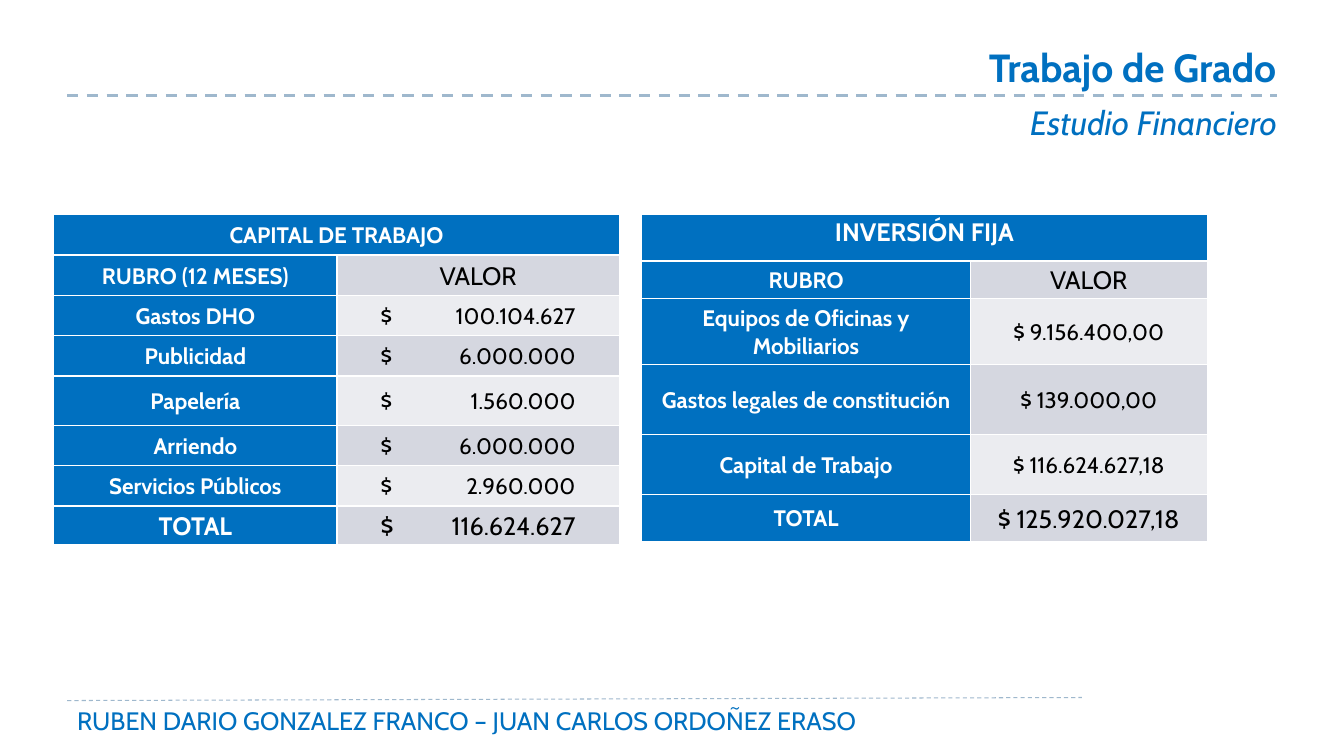
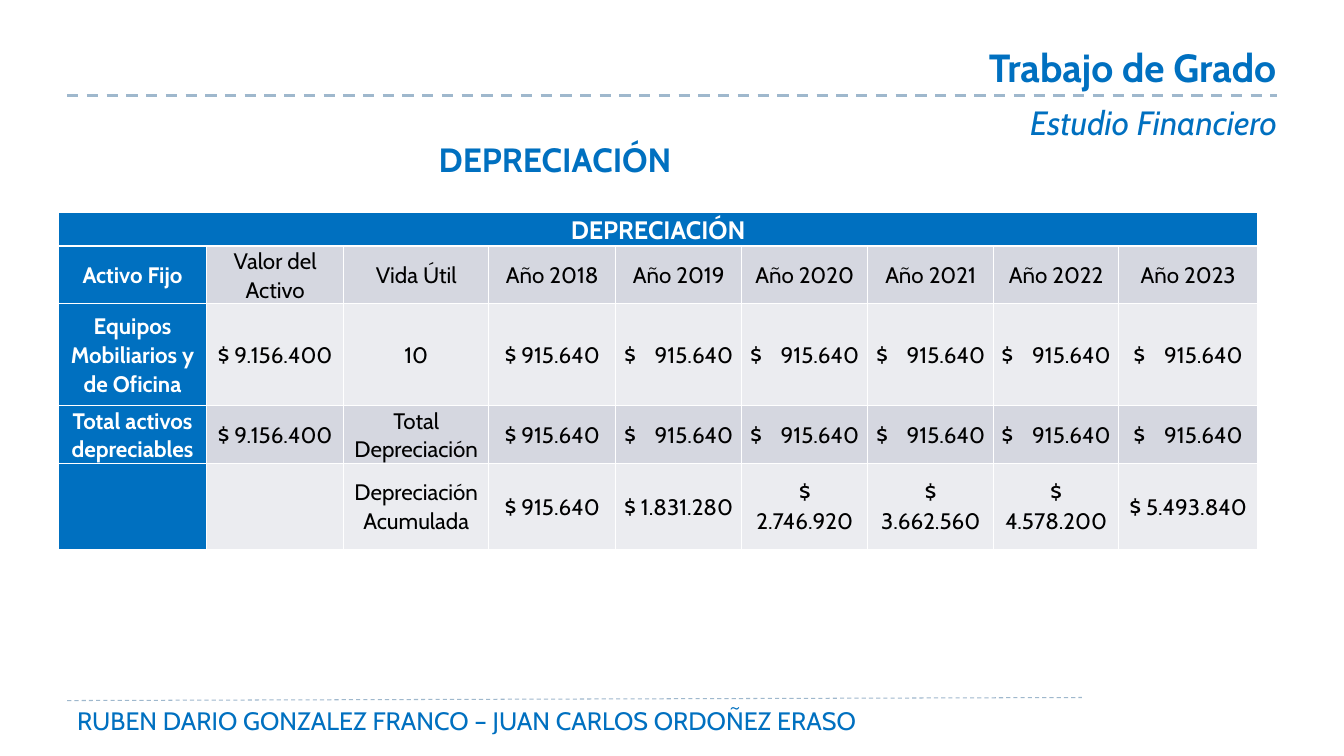
import lxml.etree
import pptx
import pptx.dml.color
import pptx.enum.dml
import pptx.enum.shapes
import pptx.enum.text
import pptx.oxml.ns
import pptx.util

# Slide size and grid
WIDTH, HEIGHT = pptx.util.Inches(13.333), pptx.util.Inches(7.5)
COLUMN, ROW = WIDTH / 40, HEIGHT / 30
CELL_INSET = 0.21  # in grid columns

# Shared look
FONT = "Cabin"
BLUE = pptx.dml.color.RGBColor(0x00, 0x70, 0xC0)
RULE_BLUE = pptx.dml.color.RGBColor(0x9F, 0xB8, 0xCD)
WHITE = pptx.dml.color.RGBColor(0xFF, 0xFF, 0xFF)
BLACK = pptx.dml.color.RGBColor(0x00, 0x00, 0x00)
BANDS = (pptx.dml.color.RGBColor(0xEB, 0xEC, 0xF0),
         pptx.dml.color.RGBColor(0xD5, 0xD7, 0xE0))
LEFT = pptx.enum.text.PP_ALIGN.LEFT
CENTER = pptx.enum.text.PP_ALIGN.CENTER
RIGHT = pptx.enum.text.PP_ALIGN.RIGHT
MIDDLE = pptx.enum.text.MSO_ANCHOR.MIDDLE
TOP = pptx.enum.text.MSO_ANCHOR.TOP

TITLE = "Trabajo de Grado"
SUBTITLE = "Estudio Financiero"
AUTHORS = "RUBEN DARIO GONZALEZ FRANCO – JUAN CARLOS ORDOÑEZ ERASO"

# Table contents; a tab sets the amount apart from its currency sign
CAPITAL = [
    ["CAPITAL DE TRABAJO", ""],
    ["RUBRO (12 MESES)", "VALOR"],
    ["Gastos DHO", "$\t100.104.627"],
    ["Publicidad", "$\t6.000.000"],
    ["Papelería", "$\t1.560.000"],
    ["Arriendo", "$\t6.000.000"],
    ["Servicios Públicos", "$\t2.960.000"],
    ["TOTAL", "$\t116.624.627"],
]
INVESTMENT = [
    ["INVERSIÓN FIJA", ""],
    ["RUBRO", "VALOR"],
    ["Equipos de Oficinas y Mobiliarios", "$ 9.156.400,00"],
    ["Gastos legales de constitución", "$ 139.000,00"],
    ["Capital de Trabajo", "$ 116.624.627,18"],
    ["TOTAL", "$ 125.920.027,18"],
]
YEARLY = ["$ 915.640"] + ["$\t915.640"] * 5
DEPRECIATION = [
    ["DEPRECIACIÓN"] + [""] * 8,
    ["Activo Fijo", "Valor del Activo", "Vida Útil"]
    + [f"Año {year}" for year in range(2018, 2024)],
    ["Equipos Mobiliarios y de Oficina", "$ 9.156.400", "10"] + YEARLY,
    ["Total activos depreciables", "$ 9.156.400", "Total Depreciación"] + YEARLY,
    ["", "", "Depreciación Acumulada", "$ 915.640", "$ 1.831.280", "$ 2.746.920",
     "$ 3.662.560", "$ 4.578.200", "$ 5.493.840"],
]


def across(columns):
    return pptx.util.Emu(round(columns * COLUMN))


def down(rows):
    return pptx.util.Emu(round(rows * ROW))


def place(shape, left, top, width, height):
    shape.left, shape.top = across(left), down(top)
    shape.width, shape.height = across(width), down(height)


def add_paragraph_mark(para, tag, **attributes):
    properties = para._p.get_or_add_pPr()
    return lxml.etree.SubElement(properties, pptx.oxml.ns.qn(tag), attributes)


def write(frame, text, size, color, align=LEFT, bold=False, italic=False):
    frame.text = text
    para = frame.paragraphs[0]
    para.alignment = align
    for span in para.runs:
        span.font.name = FONT
        span.font.size = pptx.util.Pt(size)
        span.font.color.rgb = color
        span.font.bold, span.font.italic = bold, italic
    return para


def write_box(box, *text_style, **options):
    frame = box.text_frame
    frame.word_wrap = True
    frame.auto_size = pptx.enum.text.MSO_AUTO_SIZE.NONE
    frame.vertical_anchor = TOP
    return write(frame, *text_style, **options)


def add_text(slide, left, top, width, height, *text_style, **options):
    box = slide.shapes.add_textbox(
        across(left), down(top), across(width), down(height))
    write_box(box, *text_style, **options)
    return box


def add_dashed_rule(slide, start, end, weight):
    rule = slide.shapes.add_connector(
        pptx.enum.shapes.MSO_CONNECTOR.STRAIGHT,
        across(start[0]), down(start[1]), across(end[0]), down(end[1]))
    rule.line.color.rgb = RULE_BLUE
    rule.line.width = pptx.util.Pt(weight)
    rule.line.dash_style = pptx.enum.dml.MSO_LINE.DASH
    lxml.etree.SubElement(rule._element.spPr, pptx.oxml.ns.qn("a:effectLst"))
    return rule


def set_up_layout(layout, slide):
    """Place the layout's headings and move the rules and footer into it."""
    for holder in list(layout.placeholders):
        if holder.placeholder_format.idx > 1:
            holder._element.getparent().remove(holder._element)
    title, subtitle = layout.placeholders
    place(title, 26.16, 1.52, 12.12, 2.28)
    place(subtitle, 27.6, 3.84, 10.7, 2)
    shared = [
        add_dashed_rule(slide, (2, 27.8), (32.2, 27.68), 0.75),
        add_dashed_rule(slide, (2, 3.8), (38, 3.8), 2),
        add_text(slide, 2, 27.8, 29.8, 1.6, AUTHORS, 18, BLUE),
    ]
    for shape in shared:
        layout.shapes.element.append(shape._element)


def write_headings(slide):
    title, subtitle = slide.placeholders
    write_box(title, TITLE, 28, BLUE, align=RIGHT, bold=True)
    para = write_box(subtitle, SUBTITLE, 24, BLUE, align=RIGHT, italic=True)
    para._p.get_or_add_pPr().set("marL", "0")
    para._p.get_or_add_pPr().set("indent", "0")
    add_paragraph_mark(para, "a:buNone")
    para.space_before = pptx.util.Pt(0)


def fill_cell(cell, text, size, is_label, band, width, amount_span):
    cell.fill.solid()
    cell.fill.fore_color.rgb = BLUE if is_label else band
    cell.vertical_anchor = MIDDLE
    cell.margin_left = cell.margin_right = across(CELL_INSET)
    cell.margin_top = cell.margin_bottom = 0
    if not text:
        return
    has_tab = "\t" in text
    para = write(cell.text_frame, text, size, WHITE if is_label else BLACK,
                 align=LEFT if has_tab else CENTER, bold=is_label)
    if has_tab:
        # Sign at the left and amount at the right of a centred span
        cell.margin_left = across((width - amount_span) / 2)
        stops = add_paragraph_mark(para, "a:tabLst")
        lxml.etree.SubElement(stops, pptx.oxml.ns.qn("a:tab"),
                              pos=str(across(amount_span)), algn="r")
    para.line_spacing = 1.07


def add_money_table(slide, left, top, widths, heights, rows,
                    large=(), amount_span=0):
    table = slide.shapes.add_table(
        len(rows), len(widths), across(left), down(top),
        across(sum(widths)), down(sum(heights))).table
    for column, width in zip(table.columns, widths):
        column.width = across(width)
    for row, height in zip(table.rows, heights):
        row.height = down(height)
    table.cell(0, 0).merge(table.cell(0, len(widths) - 1))
    for r, texts in enumerate(rows):
        for c, text in enumerate(texts):
            fill_cell(table.cell(r, c), text, 18 if (r, c) in large else 16,
                      r == 0 or c == 0, BANDS[r % 2], widths[c], amount_span)
    return table


def add_investment_tables(slide):
    add_money_table(slide, 1.6, 8.52, [8.43, 8.4],
                    [1.6] * 4 + [1.96, 1.6, 1.6, 1.52], CAPITAL,
                    large={(1, 1), (7, 0), (7, 1)}, amount_span=5.8)
    table = add_money_table(slide, 19.1, 8.52, [9.78, 7.05],
                            [1.84, 1.48, 2.64, 2.76, 2.4, 1.84], INVESTMENT,
                            large={(0, 0), (1, 1), (5, 1)})
    table.cell(0, 0).vertical_anchor = TOP


def add_depreciation_table(slide):
    add_money_table(slide, 1.74, 8.44,
                    [4.41, 4.08, 4.32, 3.78, 3.75, 3.75, 3.75, 3.72, 4.14],
                    [1.32, 2.24, 4.04, 2.24, 3.4], DEPRECIATION,
                    large={(0, 0)}, amount_span=3.24)
    add_text(slide, 2.52, 5.32, 28, 2, "DEPRECIACIÓN", 24, BLUE,
             align=CENTER, bold=True)


def main():
    deck = pptx.Presentation()
    deck.slide_width, deck.slide_height = WIDTH, HEIGHT
    layout = deck.slide_layouts[1]
    pages = [deck.slides.add_slide(layout) for _ in range(2)]
    set_up_layout(layout, pages[0])
    for page, add_content in zip(pages, (add_investment_tables,
                                         add_depreciation_table)):
        write_headings(page)
        add_content(page)
    deck.save("out.pptx")


if __name__ == "__main__":
    main()
